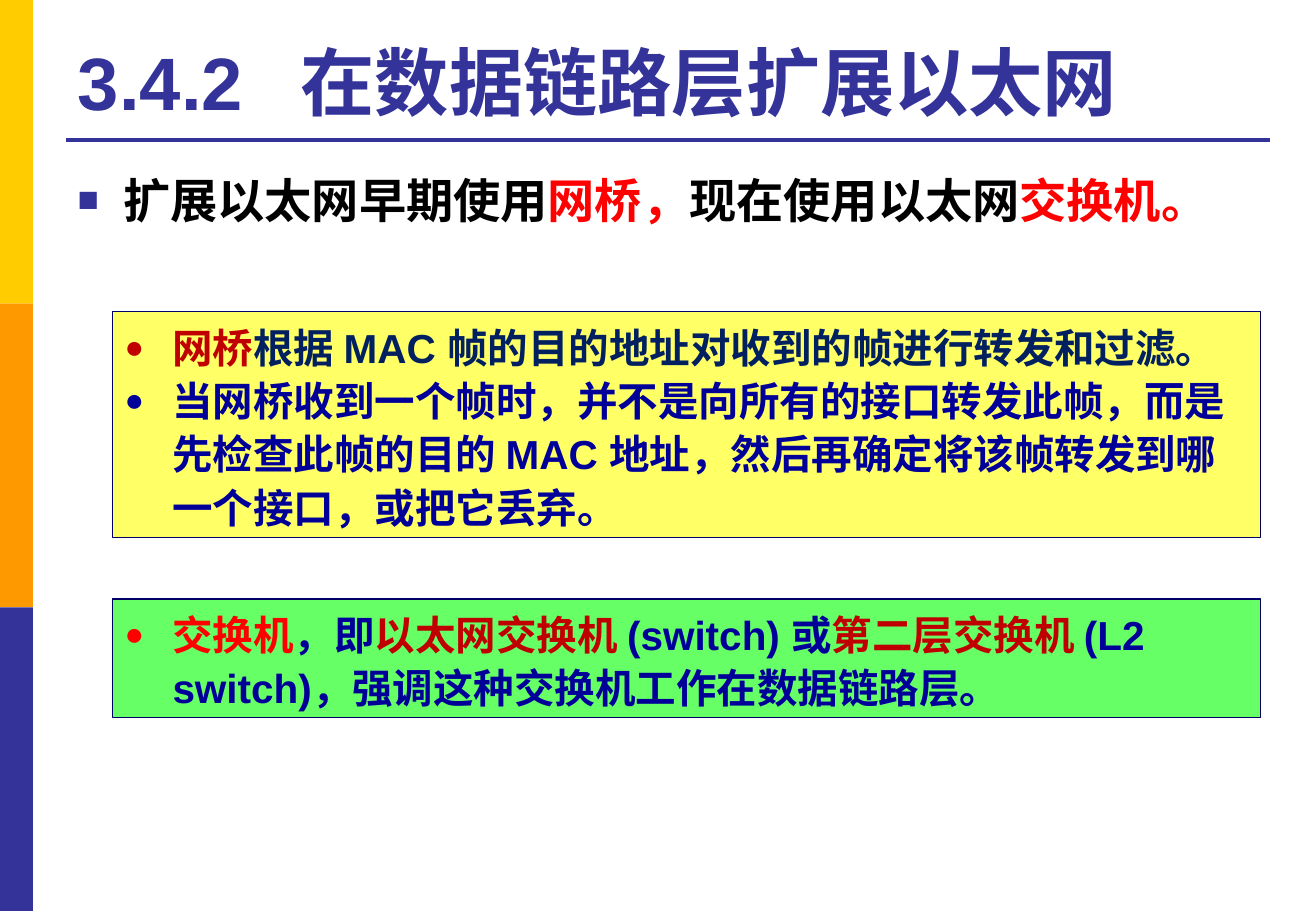
"""Builds the slide on extending Ethernet at the data link layer."""
from lxml.etree import SubElement
from pptx import Presentation
from pptx.dml.color import RGBColor
from pptx.enum.shapes import MSO_CONNECTOR as CONNECTOR, MSO_SHAPE as SHAPE
from pptx.enum.text import MSO_ANCHOR as ANCHOR, MSO_AUTO_SIZE as AUTO_SIZE, PP_ALIGN as ALIGN
from pptx.oxml.ns import qn
from pptx.util import Pt


def color(value):
    return RGBColor.from_string(value)


def write(paragraph, runs, size, bullet=None, bullet_color=None, bullet_size=80,
          indent=0, tab=None, spacing=None):
    paragraph.alignment = ALIGN.LEFT
    if spacing:
        paragraph.line_spacing = spacing
    properties = paragraph._p.get_or_add_pPr()
    if bullet:
        properties.set("marL", str(Pt(indent)))
        properties.set("indent", str(-Pt(indent)))
        bullet_fill = SubElement(properties, qn("a:buClr"))
        SubElement(bullet_fill, qn("a:srgbClr"), val=bullet_color or runs[0][1])
        SubElement(properties, qn("a:buSzPct"), val=str(bullet_size * 1000))
        SubElement(properties, qn("a:buFont"), typeface="Arial")
        SubElement(properties, qn("a:buChar"), char=bullet)
    if tab:
        tabs = SubElement(properties, qn("a:tabLst"))
        SubElement(tabs, qn("a:tab"), pos=str(Pt(tab)), algn="l")
    for text, text_color in runs:
        run = paragraph.add_run()
        run.text = text
        run.font.name = "Arial"
        run.font.size = Pt(size)
        run.font.bold = True
        run.font.color.rgb = color(text_color)


NAVY, BLUE, RED, DARK_RED = "333399", "000099", "FF0000", "C00000"

deck = Presentation()
deck.slide_width, deck.slide_height = Pt(780), Pt(540)
slide = deck.slides.add_slide(deck.slide_layouts[5])
shapes = slide.shapes

for index, band_color in enumerate(["FFCC00", "FF9900", NAVY]):
    band = shapes.add_shape(SHAPE.RECTANGLE, 0, Pt(180 * index), Pt(19.5), Pt(180))
    band.shadow.inherit = False
    band.fill.solid()
    band.fill.fore_color.rgb = color(band_color)
    band.line.fill.background()

rule = shapes.add_connector(CONNECTOR.STRAIGHT, Pt(39), Pt(82.8), Pt(753), Pt(82.8))
rule.line.color.rgb = color(NAVY)
rule.line.width = Pt(2.25)
SubElement(rule._element.spPr, qn("a:effectLst"))

title = shapes.title
title.left, title.top, title.width, title.height = Pt(39), Pt(15), Pt(714), Pt(63)
title.text_frame.auto_size = AUTO_SIZE.NONE
title.text_frame.vertical_anchor = ANCHOR.BOTTOM
write(title.text_frame.paragraphs[0], [("3.4.2\t在数据链路层扩展以太网", NAVY)], 44, tab=132)

summary = shapes.add_textbox(Pt(39), Pt(94.5), Pt(714), Pt(389))
summary.text_frame.word_wrap = True
write(summary.text_frame.paragraphs[0],
      [("扩展以太网早期使用", "000000"), ("网桥，", RED),
       ("现在使用以太网", "000000"), ("交换机。", RED)],
      28, bullet="■", bullet_color=NAVY, bullet_size=75, indent=27, spacing=1.1)

bridge_points = [
    [("网桥", DARK_RED), ("根据 MAC 帧的目的地址对收到的帧进行转发和过滤。", "002060")],
    [("当网桥收到一个帧时，并不是向所有的接口转发此帧，而是先检查此帧的目的 MAC 地址，"
      "然后再确定将该帧转发到哪一个接口，或把它丢弃。", BLUE)],
]
switch_points = [
    [("交换机", RED), ("，即", BLUE), ("以太网交换机 ", DARK_RED), ("(switch) 或", BLUE),
     ("第二层交换机 ", DARK_RED), ("(L2 switch)，强调这种交换机工作在数据链路层。", BLUE)],
]
for top, height, panel_color, points in [(184.8, 134, "FFFF66", bridge_points),
                                         (355, 70.5, "66FF66", switch_points)]:
    panel = shapes.add_shape(SHAPE.RECTANGLE, Pt(66.8), Pt(top), Pt(680.5), Pt(height))
    panel.shadow.inherit = False
    panel.fill.solid()
    panel.fill.fore_color.rgb = color(panel_color)
    panel.line.color.rgb = color("000066")
    panel.line.width = Pt(0.75)
    frame = panel.text_frame
    frame.word_wrap = True
    frame.auto_size = AUTO_SIZE.SHAPE_TO_FIT_TEXT
    frame.vertical_anchor = ANCHOR.TOP
    for index, point in enumerate(points):
        paragraph = frame.add_paragraph() if index else frame.paragraphs[0]
        write(paragraph, point, 24, bullet="●", indent=28.35, spacing=1.1)

deck.save("out.pptx")
